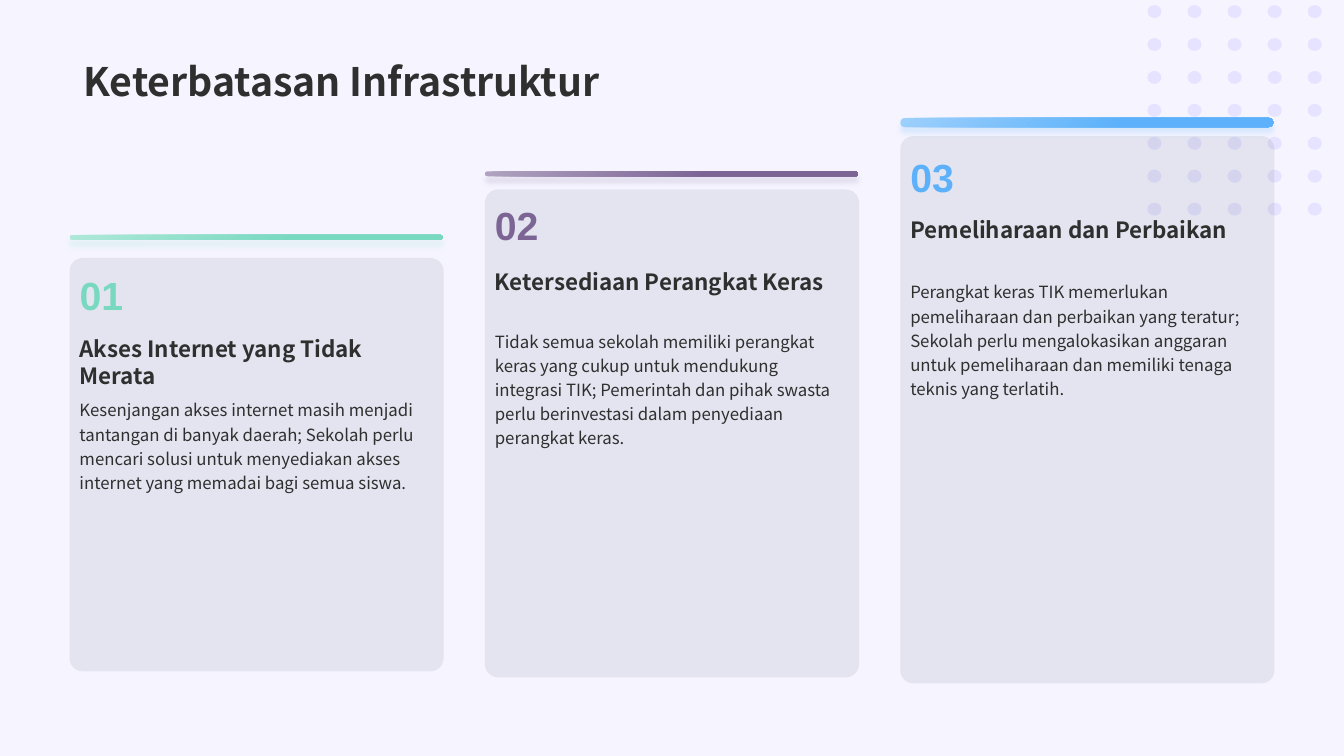
from lxml import etree
from pptx import Presentation
from pptx.dml.color import RGBColor
from pptx.enum.shapes import MSO_SHAPE
from pptx.enum.text import MSO_ANCHOR
from pptx.oxml.ns import qn
from pptx.util import Inches, Pt

ROUND_RECT, OVAL = MSO_SHAPE.ROUNDED_RECTANGLE, MSO_SHAPE.OVAL
TOP, BOTTOM = MSO_ANCHOR.TOP, MSO_ANCHOR.BOTTOM

BACKGROUND = RGBColor(0xF6, 0xF5, 0xFF)
DOT = RGBColor(0xA4, 0x9F, 0xFF)
PANEL = RGBColor(0x77, 0x84, 0x95)
INK = RGBColor(0x2F, 0x2F, 0x2F)
MINT, PALE_MINT = RGBColor(0x79, 0xD9, 0xC0), RGBColor(0xAF, 0xE8, 0xD9)
PURPLE, PALE_PURPLE = RGBColor(0x7C, 0x65, 0x95), RGBColor(0xB0, 0xA2, 0xC0)
BLUE, PALE_BLUE = RGBColor(0x5C, 0xB1, 0xFA), RGBColor(0x9D, 0xD0, 0xFC)

BODY_FONT, NUMBER_FONT = "Noto Sans CJK SC", "Arial"

TITLE = "Keterbatasan Infrastruktur"
# bar and panel are (top, height); the other places are text tops
CARDS = [
    dict(number="01", heading="Akses Internet yang Tidak Merata",
         body="Kesenjangan akses internet masih menjadi tantangan di banyak daerah; "
              "Sekolah perlu mencari solusi untuk menyediakan akses internet yang "
              "memadai bagi semua siswa.",
         color=MINT, pale=PALE_MINT, bar=(2.33, 0.05), panel=(2.56, 4.1),
         number_top=2.64, heading_top=3.28, body_top=3.88),
    dict(number="02", heading="Ketersediaan Perangkat Keras",
         body="Tidak semua sekolah memiliki perangkat keras yang cukup untuk "
              "mendukung integrasi TIK; Pemerintah dan pihak swasta perlu "
              "berinvestasi dalam penyediaan perangkat keras.",
         color=PURPLE, pale=PALE_PURPLE, bar=(1.7, 0.05), panel=(1.88, 4.84),
         number_top=1.95, heading_top=2.61, body_top=3.2),
    dict(number="03", heading="Pemeliharaan dan Perbaikan",
         body="Perangkat keras TIK memerlukan pemeliharaan dan perbaikan yang "
              "teratur; Sekolah perlu mengalokasikan anggaran untuk pemeliharaan "
              "dan memiliki tenaga teknis yang terlatih.",
         color=BLUE, pale=PALE_BLUE, bar=(1.17, 0.09), panel=(1.35, 5.43),
         number_top=1.47, heading_top=2.1, body_top=2.71),
]
CARD_LEFT, CARD_PITCH, CARD_WIDTH = 0.69, 4.12, 3.7
DOT_COLS, DOT_ROWS = 5, 7
DOT_LEFT, DOT_TOP, DOT_RIGHT, DOT_BOTTOM = 11.38, 0.05, 12.97, 2.01

prs = Presentation()
prs.slide_width, prs.slide_height = Inches(13.33), Inches(7.5)
s = prs.slides.add_slide(prs.slide_layouts[6])
s.background.fill.solid()
s.background.fill.fore_color.rgb = BACKGROUND


def add_plain_shape(kind, left, top, width, height):
    sp = s.shapes.add_shape(kind, Inches(left), Inches(top), Inches(width), Inches(height))
    sp.shadow.inherit = False
    sp.line.fill.background()
    return sp


def fill_translucent(sp, color, percent):
    sp.fill.solid()
    sp.fill.fore_color.rgb = color
    clr = sp._element.spPr.find(qn("a:solidFill"))[0]
    etree.SubElement(clr, qn("a:alpha"), val=str(percent * 1000))


def add_glow_below(sp, color):
    """Soft 4 pt drop shadow straight down, 20 % opaque."""
    effects = sp._element.spPr.find(qn("a:effectLst"))
    shadow = etree.SubElement(effects, qn("a:outerShdw"), blurRad=str(Pt(4)),
                              dist=str(Pt(4)), dir="5400000", algn="t", rotWithShape="0")
    clr = etree.SubElement(shadow, qn("a:srgbClr"), val=str(color))
    etree.SubElement(clr, qn("a:alpha"), val="20000")


def add_text(text, left, top, width, height, size, font=BODY_FONT, color=INK,
             bold=True, spacing=None, anchor=TOP):
    box = s.shapes.add_textbox(Inches(left), Inches(top), Inches(width), Inches(height))
    tf = box.text_frame
    tf.word_wrap = True
    tf.vertical_anchor = anchor
    p = tf.paragraphs[0]
    if spacing:
        p.line_spacing = spacing
    r = p.add_run()
    r.text = text
    r.font.size, r.font.name, r.font.bold = Pt(size), font, bold
    r.font.color.rgb = color
    # the East Asian face follows the Latin one
    etree.SubElement(r._r.get_or_add_rPr(), qn("a:ea"), typeface=font)


def add_bar(left, top, height, color, pale):
    bar = add_plain_shape(ROUND_RECT, left, top, CARD_WIDTH, height)
    bar.adjustments[0] = 0.5
    bar.fill.gradient()
    bar.fill.gradient_angle = 315
    for stop, position, rgb in zip(bar.fill.gradient_stops, (0, 0.6), (pale, color)):
        stop.position = position
        stop.color.rgb = rgb
    add_glow_below(bar, color)


def add_card(left, card):
    top, height = card["panel"]
    panel = add_plain_shape(ROUND_RECT, left, top, CARD_WIDTH + 0.01, height)
    panel.adjustments[0] = 0.035
    fill_translucent(panel, PANEL, 15)
    add_bar(left, *card["bar"], card["color"], card["pale"])
    add_text(card["number"], left, card["number_top"], 2.19, 0.57, 28,
             font=NUMBER_FONT, color=card["color"])
    add_text(card["heading"], left, card["heading_top"], CARD_WIDTH, 0.37, 16)
    add_text(card["body"], left, card["body_top"], CARD_WIDTH, 0.95, 12,
             bold=False, spacing=1.2)


col_pitch = (DOT_RIGHT - DOT_LEFT) / (DOT_COLS - 1)
row_pitch = (DOT_BOTTOM - DOT_TOP) / (DOT_ROWS - 1)
for row in range(DOT_ROWS):
    for col in range(DOT_COLS):
        dot = add_plain_shape(OVAL, DOT_LEFT + col * col_pitch,
                              DOT_TOP + row * row_pitch, 0.14, 0.13)
        fill_translucent(dot, DOT, 20)

add_text(TITLE, 0.73, 0.1, 11.88, 0.98, 28, anchor=BOTTOM)
for i, card in enumerate(CARDS):
    add_card(CARD_LEFT + i * CARD_PITCH, card)

prs.save("out.pptx")
